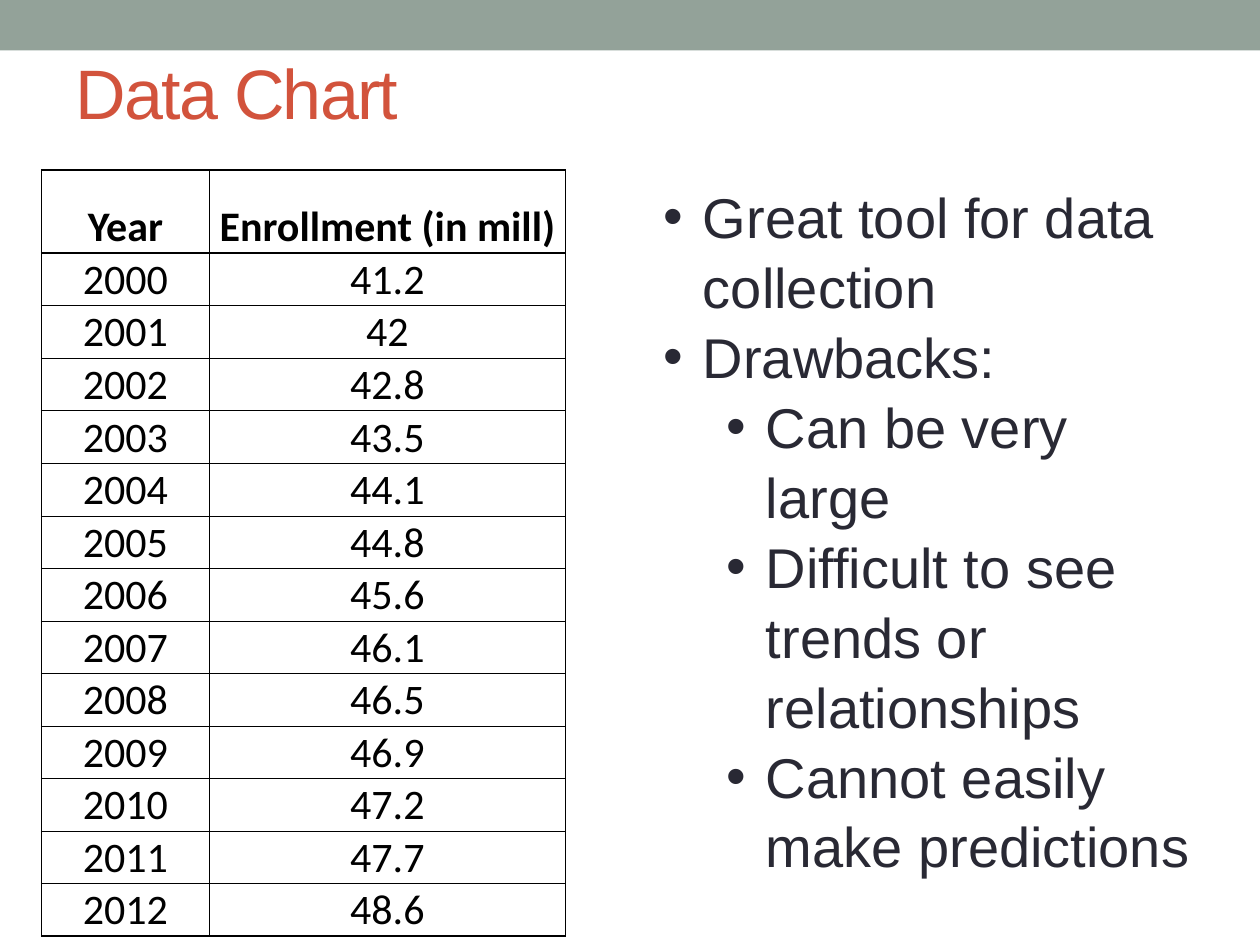
from lxml import etree
from pptx import Presentation
from pptx.dml.color import RGBColor
from pptx.enum.shapes import MSO_SHAPE
from pptx.enum.text import MSO_ANCHOR, MSO_AUTO_SIZE, PP_ALIGN
from pptx.oxml.ns import qn
from pptx.util import Inches, Pt

RECTANGLE = MSO_SHAPE.RECTANGLE
MIDDLE, BOTTOM = MSO_ANCHOR.MIDDLE, MSO_ANCHOR.BOTTOM
LEFT, CENTER = PP_ALIGN.LEFT, PP_ALIGN.CENTER
GROW = MSO_AUTO_SIZE.SHAPE_TO_FIT_TEXT

COLORS = {"bar": "93A299", "title": "D2533C", "body": "292934", "table": "000000"}
ENROLLMENT = ["41.2", "42", "42.8", "43.5", "44.1", "44.8", "45.6",
              "46.1", "46.5", "46.9", "47.2", "47.7", "48.6"]
POINTS = [
    (0, "Great tool for data collection"),
    (0, "Drawbacks:"),
    (1, "Can be very large"),
    (1, "Difficult to see trends or relationships"),
    (1, "Cannot easily make predictions"),
]


def write_text(paragraph, text, size, color, font="Arial", bold=False,
               align=LEFT, tracking=None, bullet_indent=None):
    """Write one formatted run, with an optional bullet indent in inches."""
    paragraph.alignment = align
    run = paragraph.add_run()
    run.text = text
    run.font.name = font
    run.font.size = Pt(size)
    run.font.bold = bold
    run.font.color.rgb = RGBColor.from_string(COLORS[color])
    if tracking is not None:
        run._r.get_or_add_rPr().set("spc", str(int(tracking * 100)))
    if bullet_indent is not None:
        properties = paragraph._p.get_or_add_pPr()
        properties.set("marL", str(Inches(bullet_indent)))
        properties.set("indent", str(Inches(-0.31)))
        etree.SubElement(properties, qn("a:buFont"), typeface="Arial")
        etree.SubElement(properties, qn("a:buChar"), char="•")


def set_borders(cell, widths):
    """Draw solid cell borders from a dict of side letters and point widths."""
    properties = cell._tc.get_or_add_tcPr()
    for side, width in widths.items():
        line = etree.SubElement(properties, qn(f"a:ln{side}"), w=str(Pt(width)))
        fill = etree.SubElement(line, qn("a:solidFill"))
        etree.SubElement(fill, qn("a:srgbClr"), val=COLORS["table"])


presentation = Presentation()
presentation.slide_width = Inches(10)
presentation.slide_height = Inches(7.5)
slide = presentation.slides.add_slide(presentation.slide_layouts[5])

# Title and top bar
title = slide.shapes.title
title.left, title.top = Inches(0.5), Inches(0.1)
title.width, title.height = Inches(9), Inches(1.25)
title.text_frame.vertical_anchor = MIDDLE
write_text(title.text_frame.paragraphs[0], "Data Chart", 40, "title", tracking=-1)

bar = slide.shapes.add_shape(RECTANGLE, 0, 0, Inches(10), Inches(0.4))
bar.shadow.inherit = False
bar.fill.solid()
bar.fill.fore_color.rgb = RGBColor.from_string(COLORS["bar"])
bar.line.fill.background()
title.element.addprevious(bar.element)

# Enrollment table
rows = [("Year", "Enrollment (in mill)")]
rows += [(str(2000 + index), value) for index, value in enumerate(ENROLLMENT)]
last_row = len(rows) - 1
table = slide.shapes.add_table(len(rows), 2, Inches(0.33), Inches(1.35),
                               Inches(4.17), Inches(6)).table
table.first_row = False
table.horz_banding = False
for column, width in zip(table.columns, (1.33, 2.83)):
    column.width = Inches(width)
for row_index, values in enumerate(rows):
    is_header = row_index == 0
    table.rows[row_index].height = Inches(
        0.66 if is_header else 0.38 if row_index == last_row else 0.36)
    for column_index, value in enumerate(values):
        cell = table.cell(row_index, column_index)
        cell.vertical_anchor = BOTTOM
        cell.margin_left = cell.margin_right = cell.margin_top = Inches(0.01)
        cell.margin_bottom = 0
        set_borders(cell, {
            "L": 1 if column_index == 0 else 0.5,
            "R": 1 if column_index == 1 else 0.5,
            "T": 1 if row_index <= 1 else 0.5,
            "B": 1 if row_index in (0, last_row) else 0.5,
        })
        cell.fill.background()
        write_text(cell.text_frame.paragraphs[0], value, 24, "table",
                   font="Calibri", bold=is_header, align=CENTER)

# Bullet points
body = slide.shapes.add_textbox(Inches(5.17), Inches(1.35), Inches(4.42), Inches(5.49))
frame = body.text_frame
frame.word_wrap = True
frame.auto_size = GROW
frame.margin_top = frame.margin_bottom = Inches(0.08)
for index, (level, text) in enumerate(POINTS):
    paragraph = frame.add_paragraph() if index else frame.paragraphs[0]
    paragraph.level = level
    paragraph.line_spacing = 1.04
    write_text(paragraph, text, 32, "body", bullet_indent=0.31 + 0.5 * level)

presentation.save("out.pptx")
